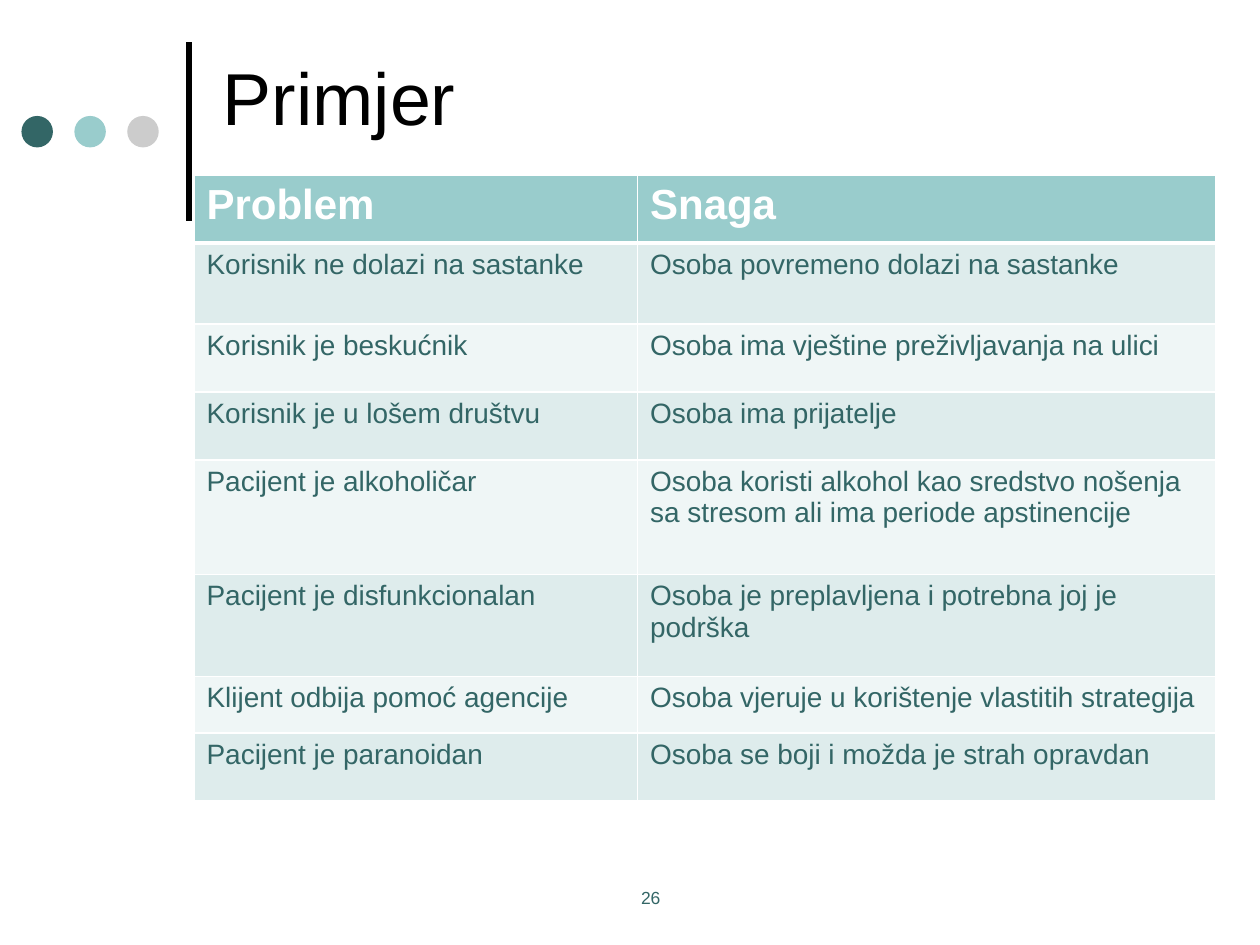
from typing import NamedTuple

from lxml import etree
from pptx import Presentation
from pptx import util as u
from pptx.dml.color import RGBColor
from pptx.enum import shapes, text
from pptx.oxml import ns

FONT = "Arial"
BLACK, WHITE, TEAL, AQUA, GRAY = "000000", "FFFFFF", "336666", "99CCCC", "CCCCCC"
BANDS = ("DEECEC", "EFF6F6")
COLUMN_WIDTHS = (3.52, 4.59)


class Row(NamedTuple):
    height: float
    problem: str
    strength: str


class Label(NamedTuple):
    content: str
    left: float
    top: float
    width: float
    height: float
    frame_format: dict
    alignment: text.PP_ALIGN
    size: float
    color: str


ROWS = (
    Row(0.54, "Problem", "Snaga"),
    Row(0.64, "Korisnik ne dolazi na sastanke", "Osoba povremeno dolazi na sastanke"),
    Row(0.54, "Korisnik je beskućnik", "Osoba ima vještine preživljavanja na ulici"),
    Row(0.54, "Korisnik je u lošem društvu", "Osoba ima prijatelje"),
    Row(0.91, "Pacijent je alkoholičar",
        "Osoba koristi alkohol kao sredstvo nošenja sa stresom ali ima periode apstinencije"),
    Row(0.81, "Pacijent je disfunkcionalan", "Osoba je preplavljena i potrebna joj je podrška"),
    Row(0.45, "Klijent odbija pomoć agencije", "Osoba vjeruje u korištenje vlastitih strategija"),
    Row(0.54, "Pacijent je paranoidan", "Osoba se boji i možda je strah opravdan"),
)

LABELS = (
    Label("Primjer", 1.67, 0.21, 7.67, 1.1,
          {"vertical_anchor": text.MSO_ANCHOR.MIDDLE}, text.PP_ALIGN.LEFT, 42, BLACK),
    Label("26", 3.58, 6.83, 3.17, 0.5,
          {"vertical_anchor": text.MSO_ANCHOR.TOP, "margin_top": u.Inches(0.21)},
          text.PP_ALIGN.CENTER, 10, TEAL),
)


def rgb(color: str) -> RGBColor:
    return RGBColor.from_string(color)


def apply(target, values: dict) -> None:
    for name, value in values.items():
        setattr(target, name, value)


def write(frame, content: str, size: float, color: str, bold: bool = False) -> None:
    frame.text = content
    font = frame.paragraphs[0].runs[0].font
    apply(font, {"name": FONT, "size": u.Pt(size), "bold": bold})
    font.color.rgb = rgb(color)


def add_label(slide, label: Label) -> None:
    box = slide.shapes.add_textbox(*map(
        u.Inches, (label.left, label.top, label.width, label.height)))
    frame = box.text_frame
    apply(frame, {"word_wrap": True, **label.frame_format})
    write(frame, label.content, label.size, label.color)
    frame.paragraphs[0].alignment = label.alignment


def add_dot(slide, left: float, color: str) -> None:
    dot = slide.shapes.add_shape(
        shapes.MSO_SHAPE.OVAL, *map(u.Inches, (left, 0.92, 0.25, 0.25)))
    dot.shadow.inherit = False
    dot.fill.solid()
    dot.fill.fore_color.rgb = rgb(color)
    dot.line.fill.background()


def add_rule(slide) -> None:
    rule = slide.shapes.add_connector(
        shapes.MSO_CONNECTOR.STRAIGHT, *map(u.Inches, (1.5, 1.75, 1.5, 0.33)))
    rule.line.color.rgb = rgb(BLACK)
    rule.line.width = u.Pt(3)
    etree.SubElement(rule.element.spPr, ns.qn("a:effectLst"))


def set_borders(cell, widths: dict) -> None:
    properties = cell._tc.get_or_add_tcPr()
    for position, (side, width) in enumerate(widths.items()):
        line = etree.Element(ns.qn(f"a:ln{side}"), w=str(u.Pt(width)))
        fill = etree.SubElement(line, ns.qn("a:solidFill"))
        etree.SubElement(fill, ns.qn("a:srgbClr"), val=WHITE)
        properties.insert(position, line)


def add_comparison_table(slide, rows: tuple) -> None:
    height = sum(row.height for row in rows)
    frame = slide.shapes.add_table(
        len(rows), len(COLUMN_WIDTHS),
        *map(u.Inches, (1.54, 1.39, sum(COLUMN_WIDTHS), height)))
    table = frame.table
    for column, width in zip(table.columns, COLUMN_WIDTHS):
        column.width = u.Inches(width)
    for index, row in enumerate(rows):
        header = index == 0
        table.rows[index].height = u.Inches(row.height)
        size, color = (24, WHITE) if header else (16, TEAL)
        background = AQUA if header else BANDS[(index - 1) % 2]
        borders = {"L": 1, "R": 1, "T": 3 if index == 1 else 1, "B": 3 if header else 1}
        for cell, content in zip(table.rows[index].cells, (row.problem, row.strength)):
            write(cell.text_frame, content, size, color, header)
            cell.fill.solid()
            cell.fill.fore_color.rgb = rgb(background)
            set_borders(cell, borders)


def main() -> None:
    presentation = Presentation()
    apply(presentation, {"slide_width": u.Inches(10), "slide_height": u.Inches(7.5)})
    slide = presentation.slides.add_slide(presentation.slide_layouts[6])

    # Decoration beside the title
    add_rule(slide)
    for index, color in enumerate((TEAL, AQUA, GRAY)):
        add_dot(slide, 0.17 + 0.42 * index, color)

    # Problems set against strengths
    add_comparison_table(slide, ROWS)

    # Title and page number
    for label in LABELS:
        add_label(slide, label)

    presentation.save("out.pptx")


if __name__ == "__main__":
    main()
